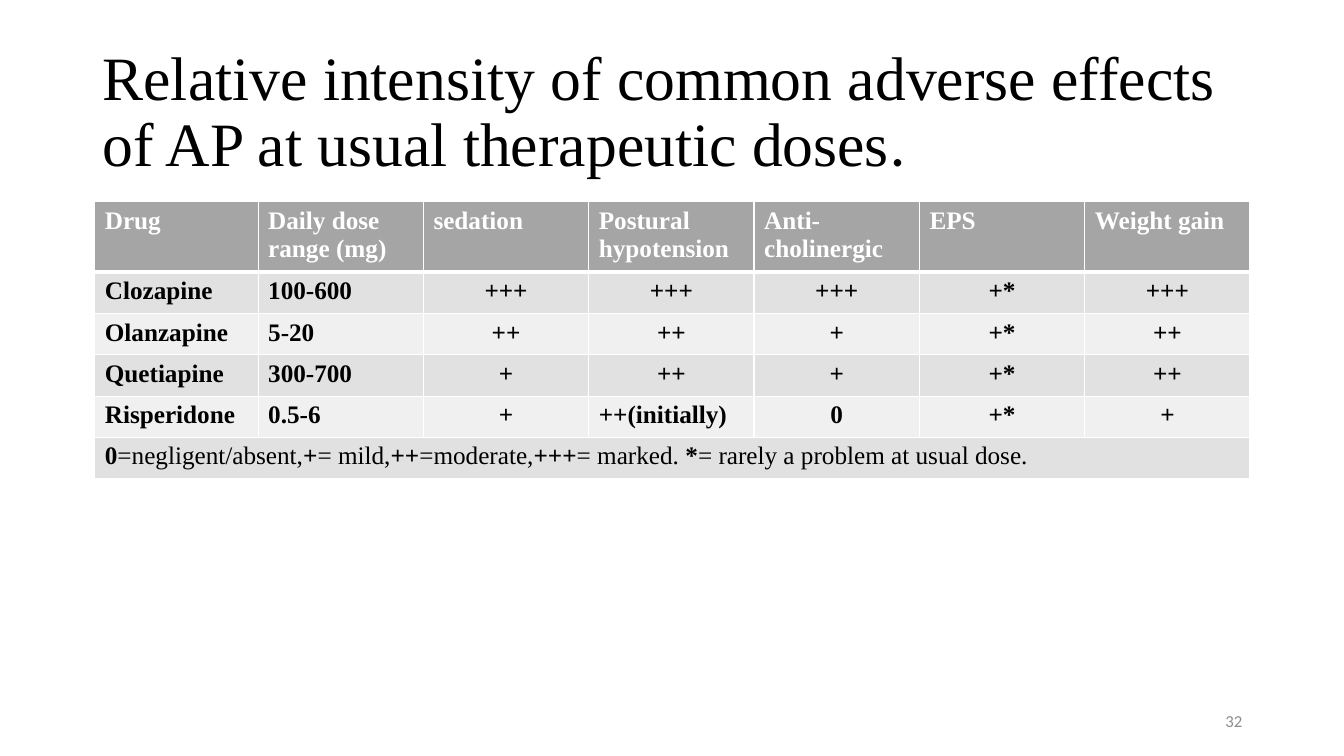
"""Build a slide with a table of adverse effects of antipsychotic drugs."""
import pptx
import pptx.dml.color
import pptx.enum.text
import pptx.oxml
import pptx.oxml.ns
import pptx.util

Inches = pptx.util.Inches
ALIGN = pptx.enum.text.PP_ALIGN

SERIF, SANS = "Times New Roman", "Calibri"
BLACK, WHITE, GREY = "000000", "FFFFFF", "8C8C8C"
HEADER_FILL, BAND_FILLS = "A5A5A5", ("E1E1E1", "F0F0F0")

TITLE = [
    ("Relative intensity of common adverse effects of AP at usual therapeutic doses", SERIF),
    (".", SANS),
]
ROWS = [
    ("Drug", "Daily dose range (mg)", "sedation", "Postural hypotension",
     "Anti-cholinergic", "EPS", "Weight gain"),
    ("Clozapine", "100-600", "+++", "+++", "+++", "+*", "+++"),
    ("Olanzapine", "5-20", "++", "++", "+", "+*", "++"),
    ("Quetiapine", "300-700", "+", "++", "+", "+*", "++"),
    ("Risperidone", "0.5-6", "+", "++(initially)", "0", "+*", "+"),
]
LEGEND = [
    ("0", "=negligent/absent,"), ("+", "= mild,"), ("++", "=moderate,"),
    ("+++", "= marked. "), ("*", "= rarely a problem at usual dose."),
]
PAGE_NUMBER = "32"
COLUMN_WIDTHS = [1.62] + [1.64] * 6
ROW_HEIGHT = 0.41


def color(value):
    return pptx.dml.color.RGBColor.from_string(value)


def style(font, size, name, value, bold=None):
    font.size, font.name, font.bold = pptx.util.Pt(size), name, bold
    font.color.rgb = color(value)


def add_text(slide, left, top, width, height):
    shape = slide.shapes.add_textbox(Inches(left), Inches(top), Inches(width), Inches(height))
    shape.text_frame.word_wrap = True
    shape.text_frame.vertical_anchor = pptx.enum.text.MSO_ANCHOR.MIDDLE
    return shape.text_frame.paragraphs[0]


def add_borders(cell, bottom_points):
    properties = cell._tc.get_or_add_tcPr()
    for index, side in enumerate(("lnL", "lnR", "lnT", "lnB")):
        width = pptx.util.Pt(bottom_points if side == "lnB" else 1)
        properties.insert(index, pptx.oxml.parse_xml(
            f'<a:{side} {pptx.oxml.ns.nsdecls("a")} w="{width}"><a:solidFill>'
            f'<a:srgbClr val="{WHITE}"/></a:solidFill></a:{side}>'))


def add_title(slide):
    paragraph = add_text(slide, 0.92, 0.4, 11.5, 1.45)
    paragraph.line_spacing = 0.9
    for text, name in TITLE:
        run = paragraph.add_run()
        run.text = text
        style(run.font, 44, name, BLACK)


def add_effects_table(slide):
    row_count = len(ROWS) + 1
    table = slide.shapes.add_table(
        row_count, len(COLUMN_WIDTHS), Inches(0.94), Inches(2),
        Inches(sum(COLUMN_WIDTHS)), Inches(row_count * ROW_HEIGHT)).table
    for column, width in zip(table.columns, COLUMN_WIDTHS):
        column.width = Inches(width)
    for row_index, row in enumerate(table.rows):
        is_header = row_index == 0
        for cell in row.cells:
            cell.fill.solid()
            cell.fill.fore_color.rgb = color(
                HEADER_FILL if is_header else BAND_FILLS[(row_index - 1) % 2])
            add_borders(cell, 3 if is_header else 1)

    for row_index, texts in enumerate(ROWS):
        for column_index, text in enumerate(texts):
            paragraph = table.cell(row_index, column_index).text_frame.paragraphs[0]
            paragraph.text = text
            style(paragraph.font, 18, SERIF, BLACK if row_index else WHITE, True)
            if row_index and column_index > 1 and "initially" not in text:
                paragraph.alignment = ALIGN.CENTER

    legend = table.cell(row_count - 1, 0)
    legend.merge(table.cell(row_count - 1, len(COLUMN_WIDTHS) - 1))
    paragraph = legend.text_frame.paragraphs[0]
    for symbol, meaning in LEGEND:
        for text, bold in ((symbol, True), (meaning, False)):
            run = paragraph.add_run()
            run.text = text
            style(run.font, 18, SERIF, BLACK, bold)


def add_page_number(slide):
    paragraph = add_text(slide, 9.42, 6.95, 3, 0.4)
    paragraph.text = PAGE_NUMBER
    paragraph.alignment = ALIGN.RIGHT
    style(paragraph.font, 12, SANS, GREY)


def main():
    presentation = pptx.Presentation()
    presentation.slide_width, presentation.slide_height = Inches(13.33), Inches(7.5)
    slide = presentation.slides.add_slide(presentation.slide_layouts[6])
    add_title(slide)
    add_effects_table(slide)
    add_page_number(slide)
    presentation.save("out.pptx")


if __name__ == "__main__":
    main()
